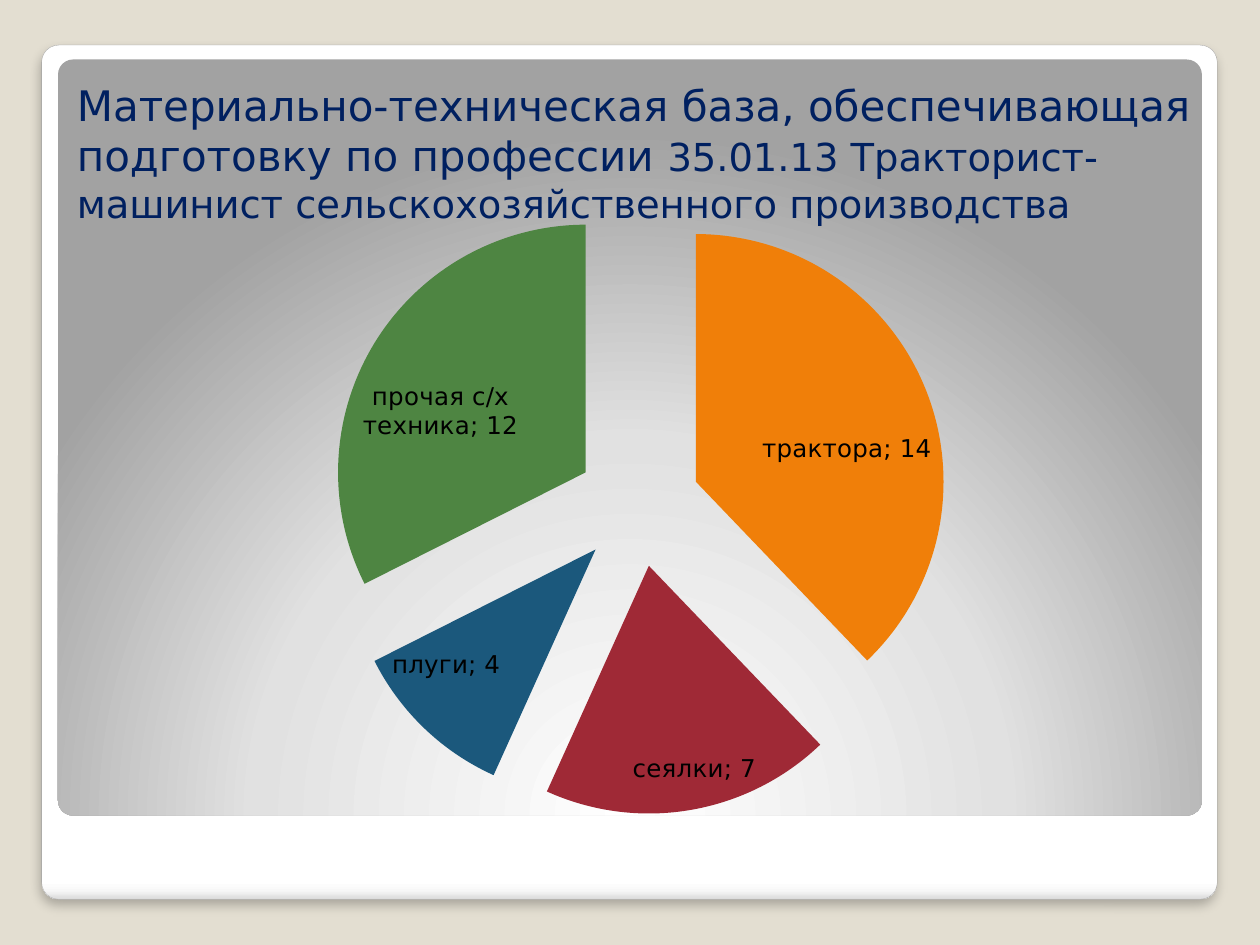
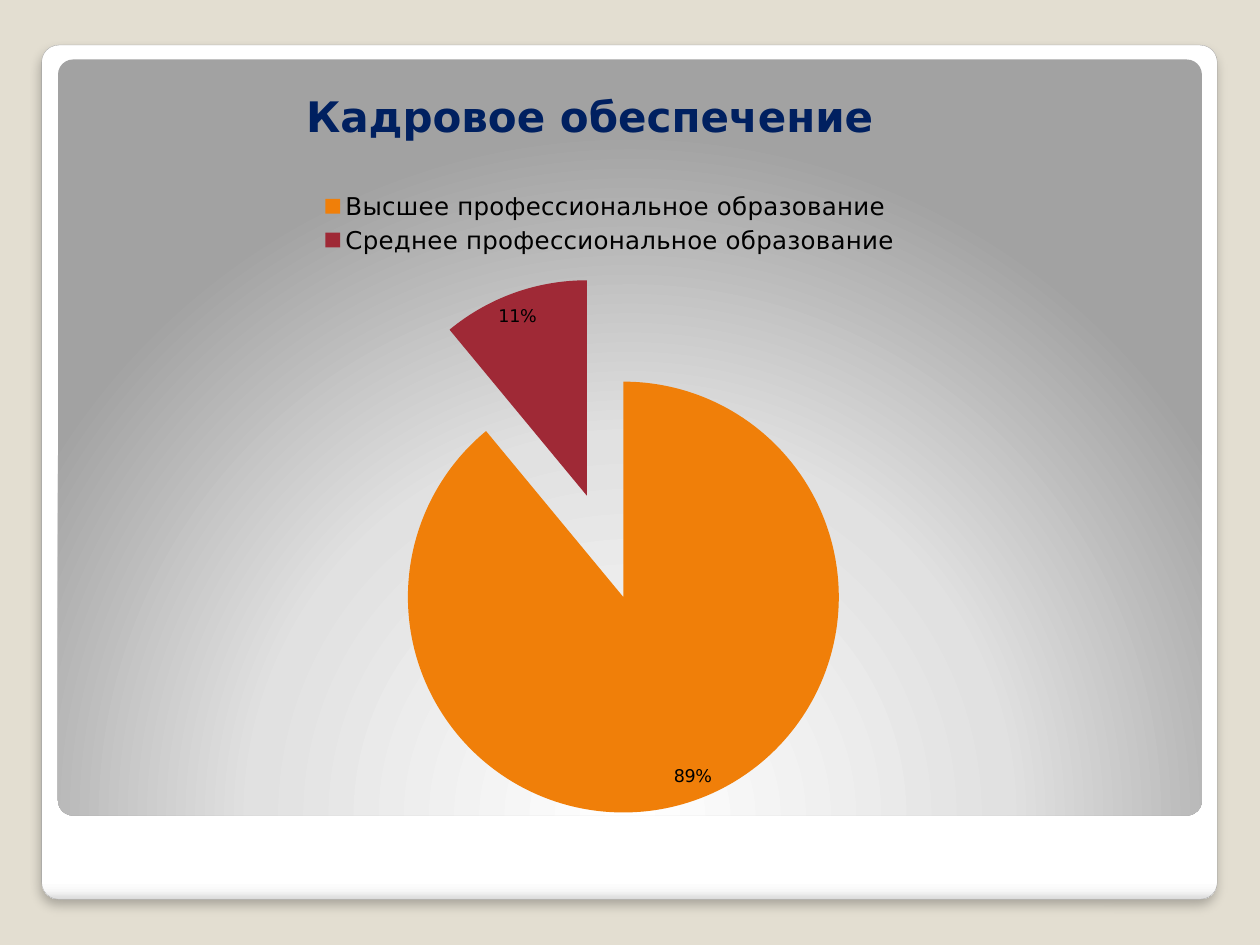
from lxml import etree
from pptx import Presentation
from pptx.chart.data import CategoryChartData
from pptx.dml.color import RGBColor
from pptx.enum.chart import XL_CHART_TYPE, XL_LABEL_POSITION, XL_LEGEND_POSITION
from pptx.enum.shapes import MSO_SHAPE
from pptx.oxml import parse_xml
from pptx.oxml.ns import nsdecls, qn
from pptx.util import Cm, Pt

ROUNDED = MSO_SHAPE.ROUNDED_RECTANGLE
PIE = XL_CHART_TYPE.PIE
BEST_FIT = XL_LABEL_POSITION.BEST_FIT
LEGEND_TOP = XL_LEGEND_POSITION.TOP

FONT = "DejaVu Sans"
BACKGROUND = "E3DED1"
NAVY = "002060"
BLACK = "000000"
SLICE_COLOURS = ["F07F09", "9F2936", "1B587C", "4E8542"]
EXPLOSION = 25

FRAME_STOPS = [(0, "FFFFFF"), (98, "FFFFFF"), (99, "F7F7F7"), (100, "DADADA")]
FRAME_SHADE = '<a:lin ang="5400000" scaled="0"/>'
PANEL_STOPS = [(0, "FFFFFF"), (55, "E1E1E1"), (100, "A2A2A2")]
PANEL_SHADE = ('<a:path path="circle"><a:fillToRect l="50000" t="175000" '
               'r="50000" b="-75000"/></a:path>')


def colour(value):
    return RGBColor.from_string(value)


def set_font(font, size, value=BLACK, bold=None):
    font.name = FONT
    font.size = Pt(size)
    font.bold = bold
    font.color.rgb = colour(value)


def add_gradient_box(page, left, top, width, height, stops, shade):
    """Add a slightly rounded box; shade is the XML for the gradient's direction."""
    box = page.shapes.add_shape(ROUNDED, Cm(left), Cm(top), Cm(width), Cm(height))
    box.adjustments[0] = 0.02
    box.shadow.inherit = False
    box.line.fill.background()
    box.fill.background()
    stop_list = "".join(
        f'<a:gs pos="{position * 1000}"><a:srgbClr val="{value}"/></a:gs>'
        for position, value in stops)
    gradient = parse_xml(f'<a:gradFill {nsdecls("a")} rotWithShape="1">'
                         f'<a:gsLst>{stop_list}</a:gsLst>{shade}</a:gradFill>')
    properties = box._element.spPr
    properties.replace(properties.find(qn("a:noFill")), gradient)
    return box


def add_shadow(box):
    effects = box._element.spPr.find(qn("a:effectLst"))
    effects.append(parse_xml(
        f'<a:outerShdw {nsdecls("a")} blurRad="{Pt(6)}" dist="{Pt(4)}" dir="5400000" '
        'algn="t" rotWithShape="0"><a:srgbClr val="000000"><a:alpha val="25000"/>'
        '</a:srgbClr></a:outerShdw>'))


def add_page(deck):
    """Add a blank page with the shared background, frame and grey panel."""
    page = deck.slides.add_slide(deck.slide_layouts[6])
    page.background.fill.solid()
    page.background.fill.fore_color.rgb = colour(BACKGROUND)
    frame = add_gradient_box(page, 0.84, 0.91, 23.7, 17.22, FRAME_STOPS, FRAME_SHADE)
    frame.line.color.rgb = colour("A4A4A4")
    frame.line.width = Pt(0.16)
    add_shadow(frame)
    add_gradient_box(page, 1.17, 1.2, 23.06, 15.24, PANEL_STOPS, PANEL_SHADE)
    return page


def add_title(page, left, top, width, height, spans, bold=None):
    """Add a title made of (text, size) spans."""
    box = page.shapes.add_textbox(Cm(left), Cm(top), Cm(width), Cm(height))
    box.text_frame.word_wrap = True
    para = box.text_frame.paragraphs[0]
    for text, size in spans:
        span = para.add_run()
        span.text = text
        set_font(span.font, size, NAVY, bold)


def place_pie(chart, left, top, width, height):
    """Fix the plot area, given as fractions of the chart."""
    plot_area = chart._chartSpace.chart.plotArea
    for layout in plot_area.findall(qn("c:layout")):
        plot_area.remove(layout)
    fractions = "".join(f'<c:{name} val="{value}"/>' for name, value in
                        zip("xywh", (left, top, width, height)))
    plot_area.insert(0, parse_xml(
        f'<c:layout {nsdecls("c")}><c:manualLayout><c:layoutTarget val="inner"/>'
        f'<c:xMode val="edge"/><c:yMode val="edge"/>{fractions}'
        '</c:manualLayout></c:layout>'))


def add_pie(page, left, top, width, height, shares, label_size):
    """Add an exploded pie of {category: value} and return its chart."""
    data = CategoryChartData()
    data.categories = list(shares)
    data.add_series("Series 1", list(shares.values()))
    chart = page.shapes.add_chart(
        PIE, Cm(left), Cm(top), Cm(width), Cm(height), data).chart
    chart.has_title = False
    chart.has_legend = False
    set_font(chart.font, 10)
    plot = chart.plots[0]
    plot.vary_by_categories = True
    series = plot.series[0]
    for index, value in enumerate(SLICE_COLOURS[:len(shares)]):
        fill = series.points[index].format.fill
        fill.solid()
        fill.fore_color.rgb = colour(value)
    explosion = etree.Element(qn("c:explosion"), val=str(EXPLOSION))
    series._element.find(qn("c:tx")).addnext(explosion)
    plot.has_data_labels = True
    set_font(plot.data_labels.font, label_size)
    plot.data_labels.position = BEST_FIT
    return chart


def add_equipment_page(deck):
    page = add_page(deck)
    add_title(page, 1.3, 1.47, 24.1, 3.12, [
        ("Материально-техническая база, обеспечивающая подготовку по профессии ", 24),
        ("35.01.13 Тракторист-машинист сельскохозяйственного производства", 22)])
    machines = {"трактора": 14, "сеялки": 7, "плуги": 4, "прочая с/х техника": 12}
    chart = add_pie(page, 1.7, 3.66, 19.6, 13.87, machines, 14)
    place_pie(chart, 0.25, 0.02, 0.64, 0.9)
    labels = chart.plots[0].data_labels
    labels.show_category_name = True
    labels.show_value = True
    labels.show_percentage = False
    separator = etree.Element(qn("c:separator"))
    separator.text = "; "
    labels._element.find(qn("c:showBubbleSize")).addnext(separator)


def add_staff_page(deck):
    page = add_page(deck)
    add_title(page, 5.92, 1.7, 14, 1.22, [("Кадровое обеспечение", 24)], bold=True)
    education = {"Высшее профессиональное образование": 89,
                 "Среднее профессиональное образование": 11}
    chart = add_pie(page, 2.77, 3.58, 19.05, 13.28, education, 10)
    place_pie(chart, 0.21, 0.15, 0.57, 0.82)
    chart.has_legend = True
    chart.legend.position = LEGEND_TOP
    chart.legend.include_in_layout = False
    set_font(chart.legend.font, 14)
    labels = chart.plots[0].data_labels
    labels.show_value = False
    labels.show_percentage = True
    labels.number_format = "0%"
    labels.number_format_is_linked = False


def main():
    deck = Presentation()
    deck.slide_width, deck.slide_height = Cm(25.4), Cm(19.05)
    add_equipment_page(deck)
    add_staff_page(deck)
    deck.save("out.pptx")


if __name__ == "__main__":
    main()
